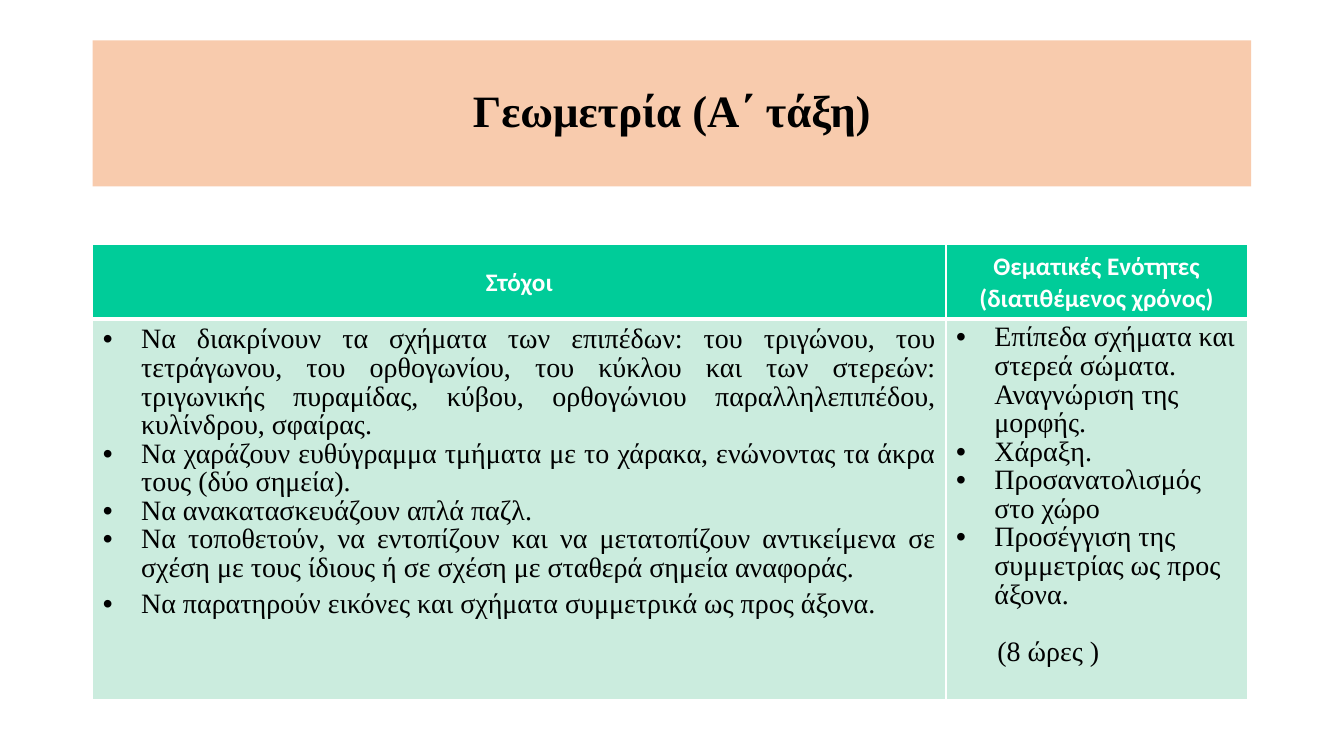
import pptx
import pptx.dml.color
import pptx.enum.shapes
import pptx.enum.text
import pptx.oxml
import pptx.oxml.ns
import pptx.util
from pptx.util import Inches

ALIGN = pptx.enum.text.PP_ALIGN
MIDDLE = pptx.enum.text.MSO_ANCHOR.MIDDLE
TOP = pptx.enum.text.MSO_ANCHOR.TOP
SERIF, SANS = "Times New Roman", "Calibri"
BLACK, WHITE = "000000", "FFFFFF"
PEACH, GREEN, MINT = "F8CBAD", "00CC99", "CBECDE"
THIN, THICK = 0.91, 2.95

HEADERS = [["Στόχοι"], ["Θεματικές Ενότητες", "(διατιθέμενος χρόνος)"]]
GOALS = [
    "Να διακρίνουν τα σχήματα των επιπέδων: του τριγώνου, του τετράγωνου, του "
    "ορθογωνίου, του κύκλου και των στερεών: τριγωνικής πυραμίδας, κύβου, "
    "ορθογώνιου παραλληλεπιπέδου, κυλίνδρου, σφαίρας.",
    "Να χαράζουν ευθύγραμμα τμήματα με το χάρακα, ενώνοντας τα άκρα τους (δύο σημεία).",
    "Να ανακατασκευάζουν απλά παζλ.",
    "Να τοποθετούν, να εντοπίζουν και να μετατοπίζουν αντικείμενα σε σχέση με "
    "τους ίδιους ή σε σχέση με σταθερά σημεία αναφοράς.",
    "Να παρατηρούν εικόνες και σχήματα συμμετρικά ως προς άξονα.",
]
UNITS = [
    "Επίπεδα σχήματα και στερεά σώματα. Αναγνώριση της μορφής.",
    "Χάραξη.",
    "Προσανατολισμός στο χώρο",
    "Προσέγγιση της συμμετρίας ως προς άξονα.",
]
HOURS = "(8 ώρες )"


def color(value):
    return pptx.dml.color.RGBColor.from_string(value)


def xml(tag, attributes="", content=""):
    namespace = pptx.oxml.ns.nsdecls("a")
    return pptx.oxml.parse_xml(f"<a:{tag} {namespace} {attributes}>{content}</a:{tag}>")


class Page:
    def __init__(self, deck):
        self.slide = deck.slides.add_slide(deck.slide_layouts[6])

    def text(self, frame, texts, size, font, ink=BLACK, bold=False,
             align=ALIGN.CENTER, spacing=0.92):
        """Fill a text frame with equally styled paragraphs."""
        frame.word_wrap = True
        for index, content in enumerate(texts):
            para = frame.add_paragraph() if index else frame.paragraphs[0]
            para.text = content
            para.alignment = align
            para.line_spacing = spacing
            para.font.size = pptx.util.Pt(size)
            para.font.name = font
            para.font.bold = bold
            para.font.color.rgb = color(ink)
        return frame.paragraphs

    def indent(self, para, left, bullet=True):
        properties = para._p.get_or_add_pPr()
        properties.set("marL", str(Inches(left)))
        if bullet:
            properties.set("indent", str(-Inches(left)))
            # Bullets come before the font defaults
            defaults = properties.find(pptx.oxml.ns.qn("a:defRPr"))
            defaults.addprevious(xml("buFont", 'typeface="Arial"'))
            defaults.addprevious(xml("buChar", 'char="•"'))

    def banner(self, text, left, top, width, height):
        box = self.slide.shapes.add_shape(
            pptx.enum.shapes.MSO_SHAPE.RECTANGLE,
            Inches(left), Inches(top), Inches(width), Inches(height))
        box.shadow.inherit = False
        box.fill.solid()
        box.fill.fore_color.rgb = color(PEACH)
        box.line.fill.background()
        box.text_frame.vertical_anchor = MIDDLE
        self.text(box.text_frame, [text], 32, SERIF, bold=True, spacing=0.9)

    def table(self, left, top, widths, heights):
        grid = self.slide.shapes.add_table(
            len(heights), len(widths), Inches(left), Inches(top),
            Inches(sum(widths)), Inches(sum(heights))).table
        for column, width in zip(grid.columns, widths):
            column.width = Inches(width)
        for row, height in zip(grid.rows, heights):
            row.height = Inches(height)
        return grid

    def cell(self, cell, fill, anchor, top_line, bottom_line):
        cell.fill.solid()
        cell.fill.fore_color.rgb = color(fill)
        cell.vertical_anchor = anchor
        properties = cell._tc.get_or_add_tcPr()
        borders = {"lnL": THIN, "lnR": THIN, "lnT": top_line, "lnB": bottom_line}
        for index, (side, width) in enumerate(borders.items()):
            properties.insert(index, xml(
                side, f'w="{pptx.util.Pt(width)}"',
                f'<a:solidFill><a:srgbClr val="{WHITE}"/></a:solidFill>'))


def main():
    deck = pptx.Presentation()
    deck.slide_width, deck.slide_height = Inches(13.34), Inches(7.5)
    page = Page(deck)

    # Title
    page.banner("Γεωμετρία (Α΄ τάξη)", 0.92, 0.4, 11.5, 1.45)

    # Table header
    grid = page.table(0.92, 2.43, [8.47, 2.99], [0.73, 3.78])
    for column, texts in enumerate(HEADERS):
        head = grid.cell(0, column)
        page.cell(head, GREEN, MIDDLE, THIN, THICK)
        page.text(head.text_frame, texts, 18, SANS, WHITE, True, spacing=1.04)

    # Goals and units
    bodies = [(GOALS, ALIGN.JUSTIFY), (UNITS + [HOURS], ALIGN.LEFT)]
    for column, (texts, align) in enumerate(bodies):
        body = grid.cell(1, column)
        page.cell(body, MINT, TOP, THICK, THIN)
        paras = page.text(body.text_frame, texts, 20, SERIF, align=align)
        for para, text in zip(paras, texts):
            if text == HOURS:
                page.indent(para, 0.41, bullet=False)
            else:
                page.indent(para, 0.38)
        # The last line stands apart from the list above it
        paras[-1].space_before = pptx.util.Pt(20.5 if column else 5.5)
    grid.cell(1, 0).margin_top = Inches(0.07)

    deck.save("out.pptx")


if __name__ == "__main__":
    main()
